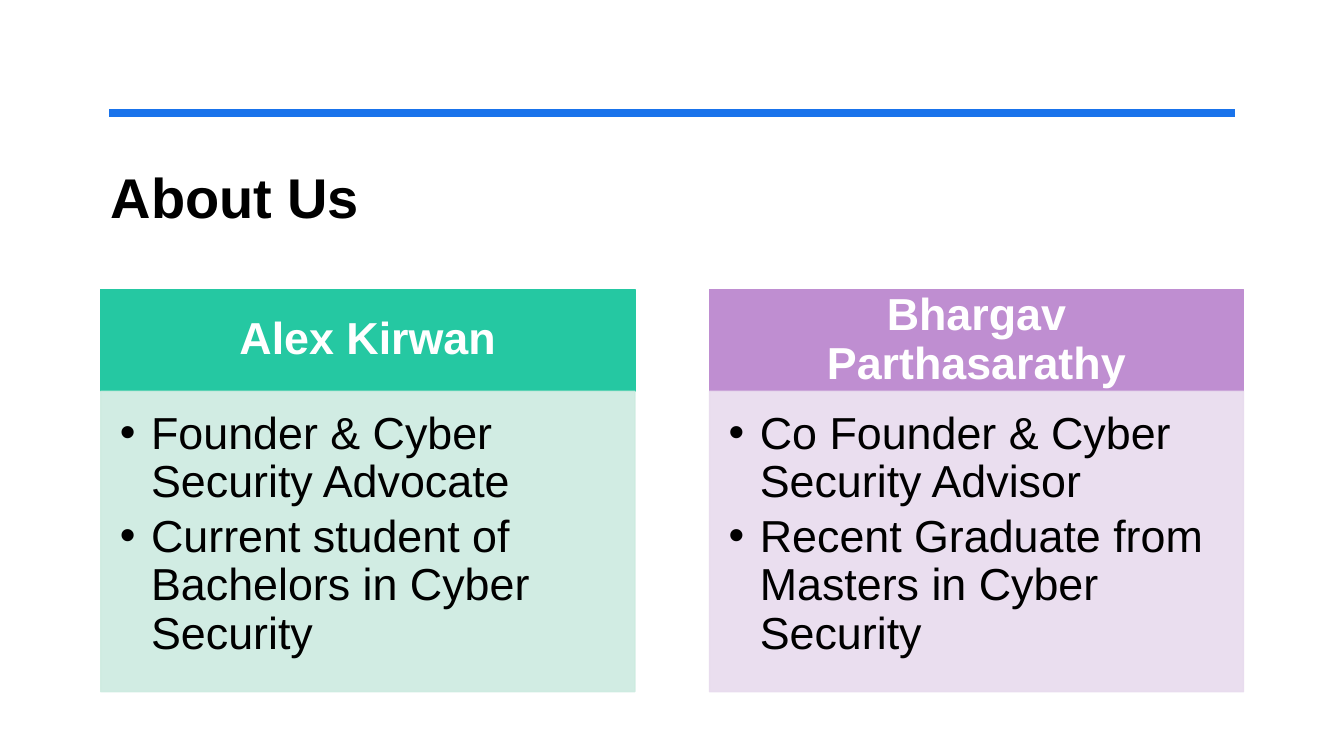
"""Build the "About Us" slide with two founder cards."""
from lxml import etree
from pptx import Presentation
from pptx.dml.color import RGBColor
from pptx.enum.shapes import MSO_CONNECTOR, MSO_SHAPE
from pptx.enum.text import MSO_ANCHOR, PP_ALIGN
from pptx.oxml.ns import qn
from pptx.util import Cm, Pt

RECTANGLE = MSO_SHAPE.RECTANGLE
STRAIGHT = MSO_CONNECTOR.STRAIGHT
TOP, MIDDLE = MSO_ANCHOR.TOP, MSO_ANCHOR.MIDDLE
LEFT, CENTER = PP_ALIGN.LEFT, PP_ALIGN.CENTER

MARGIN, CARD_WIDTH, CARD_STEP = 2.54, 13.46, 15.34
HEADER_TOP, HEADER_HEIGHT, BODY_HEIGHT = 7.3, 2.56, 7.57

TITLE = {"size": 40, "bold": True, "color": "000000", "align": LEFT, "spacing": 1.0,
         "after": 0, "bullet": False, "anchor": TOP, "insets": (0.25, 0.28, 0.25, 0.13)}
HEADER = {"size": 32, "bold": True, "color": "FFFFFF", "align": CENTER, "spacing": 0.9,
          "after": 0, "bullet": False, "anchor": MIDDLE, "insets": (0.63, 0.36, 0.63, 0.36)}
BODY = {"size": 32, "bold": False, "color": "000000", "align": LEFT, "spacing": 0.9,
        "after": 4.8, "bullet": True, "anchor": TOP, "insets": (0.48, 0.48, 0.63, 0.71)}

CARDS = [
    ("Alex Kirwan", "25C8A2", "CDEBE0",
     ["Founder & Cyber Security Advocate",
      "Current student of Bachelors in Cyber Security"]),
    ("Bhargav Parthasarathy", "BF8ED1", "E8DBEE",
     ["Co Founder & Cyber Security Advisor",
      "Recent Graduate from Masters in Cyber Security"]),
]


def rgb(color):
    """Turn a hex string into a colour."""
    return RGBColor.from_string(color)


def write(box, lines, style):
    """Fill a box with paragraphs in the given style."""
    frame = box.text_frame
    frame.word_wrap = True
    frame.vertical_anchor = style["anchor"]
    for side, inset in zip(("left", "top", "right", "bottom"), style["insets"]):
        setattr(frame, f"margin_{side}", Cm(inset))
    for index, line in enumerate(lines):
        para = frame.add_paragraph() if index else frame.paragraphs[0]
        para.alignment = style["align"]
        para.line_spacing = style["spacing"]
        para.space_after = Pt(style["after"])
        if style["bullet"]:
            properties = para._p.get_or_add_pPr()
            properties.set("marL", str(Cm(0.79)))
            properties.set("indent", str(Cm(-0.79)))
            etree.SubElement(properties, qn("a:buFont")).set("typeface", "Arial")
            etree.SubElement(properties, qn("a:buChar")).set("char", "•")
        span = para.add_run()
        span.text = line
        span.font.color.rgb = rgb(style["color"])
        font = {"name": "Arial", "size": Pt(style["size"]), "bold": style["bold"]}
        for name, value in font.items():
            setattr(span.font, name, value)


deck = Presentation()
deck.slide_width, deck.slide_height = Cm(33.87), Cm(19.05)
page = deck.slides.add_slide(deck.slide_layouts[6])

title = page.shapes.add_textbox(Cm(MARGIN), Cm(3.81), Cm(28.78), Cm(3.18))
write(title, ["About Us"], TITLE)

rule = page.shapes.add_connector(STRAIGHT, Cm(2.75), Cm(2.85), Cm(31.12), Cm(2.85))
rule.line.color.rgb = rgb("1973EB")
rule.line.width = Pt(6)
etree.SubElement(rule._element.spPr, qn("a:effectLst"))

for column, (person, accent, tint, facts) in enumerate(CARDS):
    left = MARGIN + column * CARD_STEP
    parts = [
        (HEADER_TOP, HEADER_HEIGHT, accent, 100, [person], HEADER),
        (HEADER_TOP + HEADER_HEIGHT, BODY_HEIGHT, tint, 90, facts, BODY),
    ]
    for top, height, color, opacity, lines, style in parts:
        panel = page.shapes.add_shape(
            RECTANGLE, Cm(left), Cm(top), Cm(CARD_WIDTH), Cm(height))
        panel.shadow.inherit = False
        panel.fill.solid()
        panel.fill.fore_color.rgb = rgb(color)
        panel.line.color.rgb = rgb(color)
        panel.line.width = Pt(1)
        if opacity < 100:
            for shade in panel._element.spPr.iter(qn("a:srgbClr")):
                etree.SubElement(shade, qn("a:alpha")).set("val", str(opacity * 1000))
        write(panel, lines, style)

deck.save("out.pptx")
